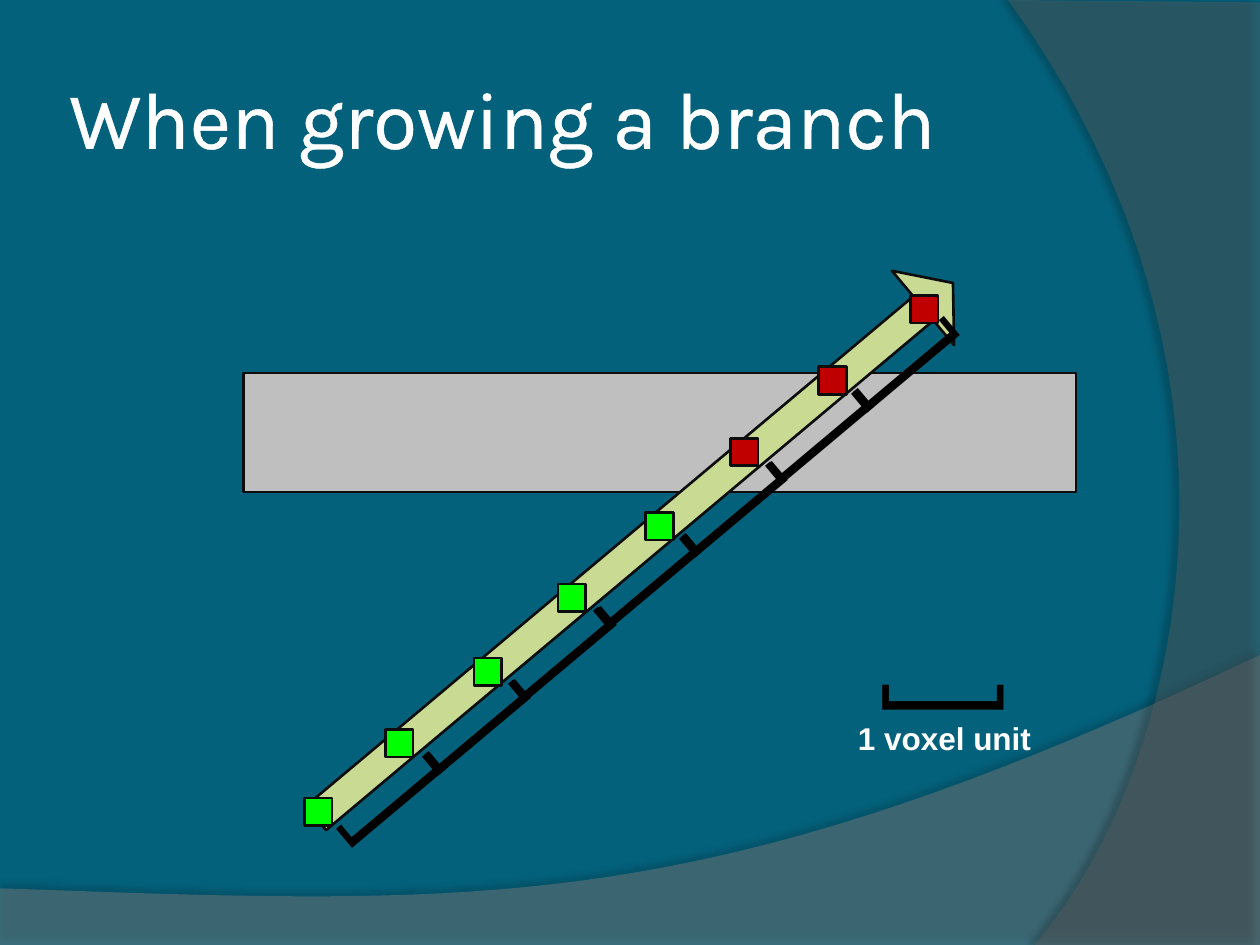
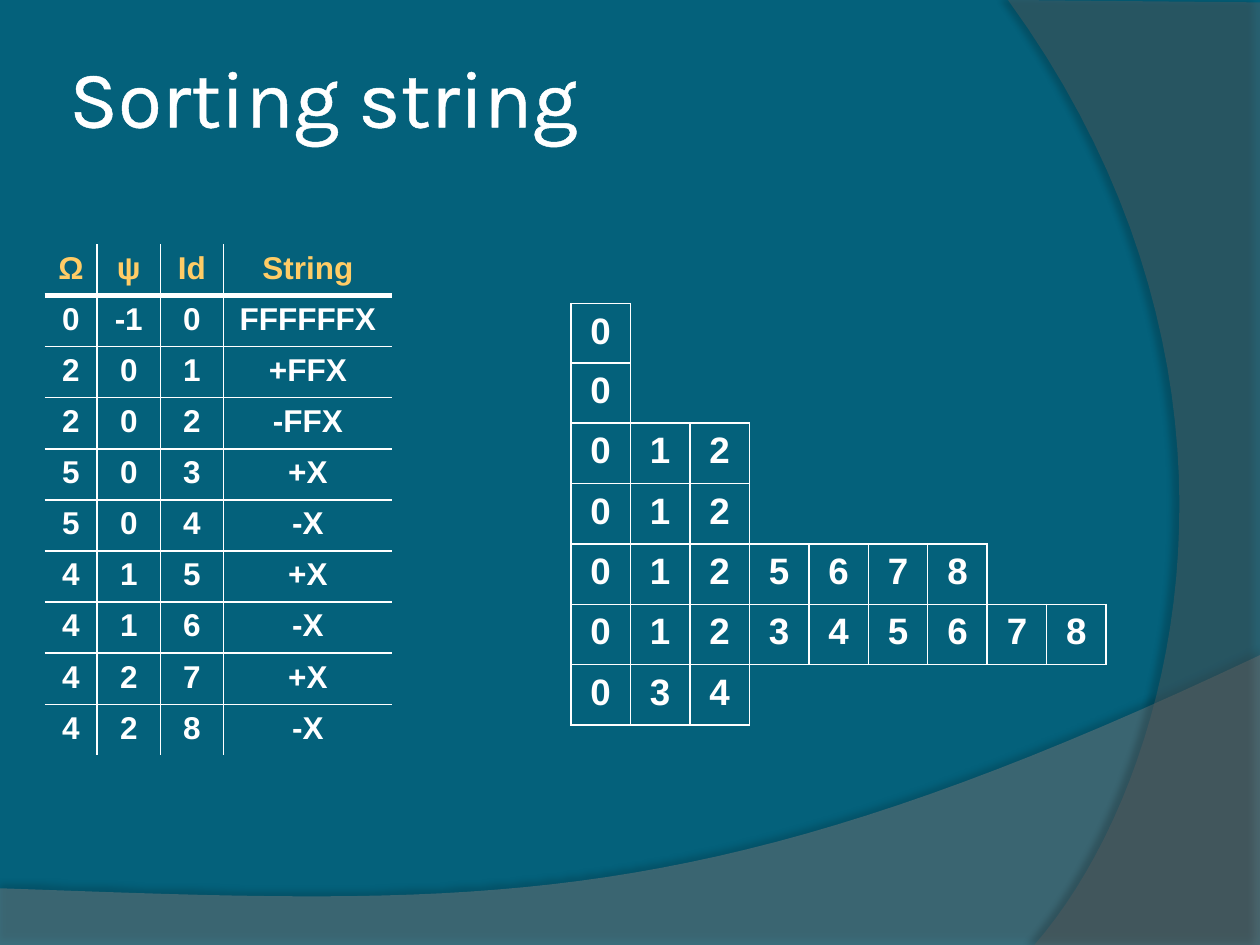
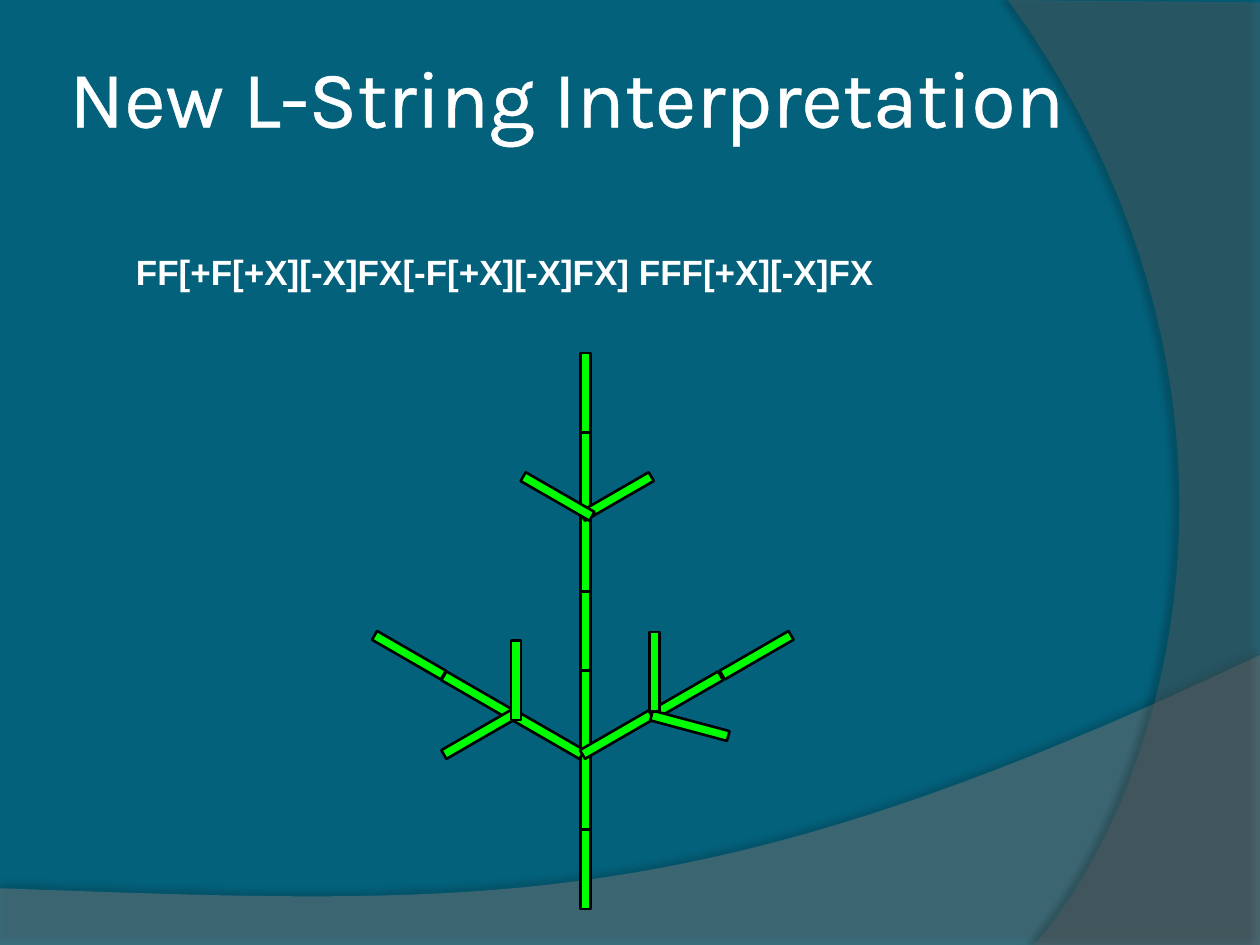
"""Build three slides on growing branches through voxels and sorting strings."""
import dataclasses

import lxml.etree
import pptx
import pptx.dml.color
import pptx.enum.shapes
import pptx.enum.text
import pptx.oxml.ns
import pptx.util

Pt = pptx.util.Pt
qn = pptx.oxml.ns.qn
SHAPES = pptx.enum.shapes.MSO_SHAPE
CENTER = pptx.enum.text.PP_ALIGN.CENTER
MIDDLE = pptx.enum.text.MSO_ANCHOR.MIDDLE
GROW = pptx.enum.text.MSO_AUTO_SIZE.SHAPE_TO_FIT_TEXT


@dataclasses.dataclass(frozen=True)
class Theme:
    """Colours, fonts and type sizes of the deck."""
    background: str = "04617B"
    lower_band: str = "7F7F7F"
    side_band: str = "5E5E5E"
    white: str = "FFFFFF"
    black: str = "000000"
    outline: str = "0D0D0D"
    header: str = "FFCC66"
    branch: str = "C9DA92"
    obstacle: str = "BFBFBF"
    free: str = "00FF00"
    blocked: str = "C00000"
    title_font: str = "Karla"
    body_font: str = "Arial"
    bracket_font: str = "Noto Sans CJK SC"
    title_size: float = 46
    body_size: float = 18
    string_size: float = 20
    index_size: float = 21
    empty_size: float = 12
    bracket_size: float = 72
    line: float = 1.5


THEME = Theme()
NO_GRID_STYLE = "{2D5ABB26-0587-4C30-8999-92F81FD0307C}"
SIDES = {"a:lnL": (0, -1), "a:lnR": (0, 1), "a:lnT": (-1, 0), "a:lnB": (1, 0)}

STRING_ROWS = [
    ["Ω", "ψ", "Id", "String"],
    ["0", "-1", "0", "FFFFFFX"],
    ["2", "0", "1", ""],
    ["2", "0", "2", ""],
    ["5", "0", "3", "+X"],
    ["5", "0", "4", "-X"],
    ["4", "1", "5", "+X"],
    ["4", "1", "6", "-X"],
    ["4", "2", "7", "+X"],
    ["4", "2", "8", "-X"],
]
LONG_TURNS = {2: "+FFX", 3: "-FFX"}
INDEX_ROWS = ["0", "0", "012", "012", "0125678", "012345678", "034"]
VOXELS = [
    (174, 456), (220.3, 416.9), (270.8, 376), (318.9, 333.8),
    (369, 292.8), (417.4, 250.4), (467.8, 209.5), (520.3, 168.9),
]
FREE_VOXELS = 5
TWIGS = [
    (290.2, 416.9, 210), (250.6, 394.6, 210), (211, 371.5, 210),
    (250.6, 416.9, 150), (272.2, 385.9, 270),
    (329.8, 416.9, 330), (369.4, 394.6, 330), (409.7, 371.5, 330),
    (371.5, 411.8, 195), (351.4, 380.9, 270),
    (329.8, 280.8, 330), (295.9, 280.8, 210),
]


def rgb(color):
    """Return the colour object of a hex string."""
    return pptx.dml.color.RGBColor.from_string(color)


def set_values(target, values):
    """Set every attribute named in the dict."""
    for name, value in values.items():
        setattr(target, name, value)


def points(box):
    """Turn plain numbers into lengths in points."""
    return [Pt(value) for value in box]


def add_element(parent, tag, **attributes):
    """Append an XML element with the given attributes."""
    values = {name: str(value) for name, value in attributes.items()}
    return lxml.etree.SubElement(parent, qn(tag), values)


def add_solid_fill(parent, color):
    """Append a solid fill and return its colour element."""
    return add_element(add_element(parent, "a:solidFill"), "a:srgbClr", val=color)


def write(frame, text, color, values, align=None):
    """Write one formatted run into a text frame and return the run."""
    para = frame.paragraphs[0]
    para.alignment = align
    span = para.add_run()
    span.text = text
    set_values(span.font, values)
    span.font.color.rgb = rgb(color)
    return span


def add_text(slide, box, text, color, values, frame_values, rotation=0):
    """Add a wrapped text box with one run and return the run."""
    shape = slide.shapes.add_textbox(*points(box))
    shape.rotation = rotation
    set_values(shape.text_frame, {"word_wrap": True, **frame_values})
    return write(shape.text_frame, text, color, values)


def add_title(slide, text, top):
    """Add the outlined slide title."""
    margins = dict.fromkeys(
        ["margin_left", "margin_top", "margin_right", "margin_bottom"], Pt(3.6))
    span = add_text(
        slide, (36, top, 588, 90), text, THEME.white,
        {"name": THEME.title_font, "size": Pt(THEME.title_size)},
        {"vertical_anchor": MIDDLE, **margins})
    properties = span.font.fill._xPr
    outline = add_element(properties, "a:ln", w=Pt(1.45))
    add_solid_fill(outline, THEME.white)
    properties.insert(0, outline)


def add_label(slide, box, text, size):
    """Add a bold white label."""
    values = {"name": THEME.body_font, "size": Pt(size), "bold": True}
    add_text(slide, box, text, THEME.white, values, {"auto_size": GROW})


def add_bracket(slide, left, top, rotation):
    """Add a turned bracket that spans one voxel unit."""
    values = {"name": THEME.bracket_font, "size": Pt(THEME.bracket_size)}
    add_text(slide, (left, top, 39.6, 94.3), "[", THEME.black, values,
             {"auto_size": GROW}, rotation)


def add_block(slide, box, fill, line=THEME.outline, rotation=0, kind=SHAPES.RECTANGLE):
    """Add a filled and outlined preset shape."""
    shape = slide.shapes.add_shape(kind, *points(box))
    shape.rotation = rotation
    shape.shadow.inherit = False
    shape.fill.solid()
    shape.fill.fore_color.rgb = rgb(fill)
    shape.line.color.rgb = rgb(line)
    shape.line.width = Pt(THEME.line)


def curve(start, first, second, end, steps=40):
    """Return points along a cubic curve, without its start."""
    result = []
    for step in range(1, steps + 1):
        t = step / steps
        weights = ((1 - t) ** 3, 3 * t * (1 - t) ** 2, 3 * t * t * (1 - t), t ** 3)
        result.append(tuple(
            sum(weight * value for weight, value in zip(weights, axis))
            for axis in zip(start, first, second, end)))
    return result


def add_band(slide, corners, controls, end, color, alpha, shadow):
    """Add a translucent band with one curved edge to the slide's layout."""
    outline = corners + curve(corners[-1], *controls, end)
    vertices = [points(vertex) for vertex in outline]
    builder = slide.shapes.build_freeform(*vertices[0])
    builder.add_line_segments(vertices[1:], close=True)
    band = builder.convert_to_shape()
    band.fill.solid()
    band.fill.fore_color.rgb = rgb(color)
    fill_color = next(band.element.spPr.iter(qn("a:srgbClr")))
    add_element(fill_color, "a:alpha", val=alpha * 1000)
    band.line.fill.background()
    band.shadow.inherit = False
    opacity, distance, direction = shadow
    effects = band.element.spPr.find(qn("a:effectLst"))
    cast = add_element(effects, "a:outerShdw", blurRad=Pt(4), dist=Pt(distance),
                       dir=direction * 60000, algn="ctr", rotWithShape=0)
    shade = add_element(cast, "a:srgbClr", val=THEME.black)
    add_element(shade, "a:alpha", val=opacity * 1000)
    slide.slide_layout.shapes.element.append(band.element)


def add_bands(slide):
    """Add the two bands that all slides share."""
    add_band(slide, [(0, 507.6), (0, 540), (720, 540), (720, 374.4)],
             [(402.5, 524.9), (281.5, 517.7)], (0, 507.6),
             THEME.lower_band, 45, (35, 3.5, 270))
    add_band(slide, [(720, 1.4), (720, 540), (591.1, 540)],
             [(673.2, 445.7), (733, 216)], (576, 0),
             THEME.side_band, 40, (45, 4, 180))


def add_borders(cell, widths):
    """Draw the cell's sides that have a width and clear the others."""
    properties = cell._tc.get_or_add_tcPr()
    for tag, width in widths.items():
        side = add_element(properties, tag, w=Pt(width))
        if width:
            add_solid_fill(side, THEME.white)
        else:
            add_element(side, "a:noFill")


def add_grid(slide, corner, rows, widths, heights, size, edge, header=None, margins=None):
    """Add a table of centred bold text whose edge rule gives the border widths."""
    box = (*corner, sum(widths), sum(heights))
    frame = slide.shapes.add_table(len(rows), len(widths), *points(box))
    table = frame.table
    set_values(table, {"first_row": False, "horz_banding": False})
    next(frame.element.iter(qn("a:tableStyleId"))).text = NO_GRID_STYLE
    for column, width in zip(table.columns, widths):
        column.width = Pt(width)
    for row, height in zip(table.rows, heights):
        row.height = Pt(height)
    values = {"name": THEME.body_font, "size": Pt(size), "bold": True}
    for y in range(len(rows)):
        for x in range(len(widths)):
            cell = table.cell(y, x)
            add_borders(cell, {tag: edge((y, x), (y + down, x + right))
                               for tag, (down, right) in SIDES.items()})
            cell.fill.background()
            if x < len(rows[y]) and rows[y][x]:
                set_values(cell, margins or {})
                color = header if header and y == 0 else THEME.white
                write(cell.text_frame, rows[y][x], color, values, CENTER)
            else:
                add_element(cell.text_frame.paragraphs[0]._p, "a:endParaRPr",
                            sz=THEME.empty_size * 100)


def string_edge(cell, neighbour):
    """Return the width of an inner edge, thicker below the header."""
    row, column = neighbour
    if not (0 <= row < len(STRING_ROWS) and 0 <= column < len(STRING_ROWS[0])):
        return 0
    return 3 if {cell[0], row} == {0, 1} else 1


def index_edge(cell, neighbour):
    """Return the width of an edge that touches a filled cell."""
    return int(any(0 <= row < len(INDEX_ROWS) and 0 <= column < len(INDEX_ROWS[row])
                   for row, column in (cell, neighbour)))


def no_edge(cell, neighbour):
    """Return no width for any edge."""
    return 0


def build_branch_slide(slide):
    """Show a branch that meets an obstacle, sampled voxel by voxel."""
    add_block(slide, (508.3, 157.7, 55.4, 22.3), THEME.branch,
              rotation=50.1, kind=SHAPES.ISOSCELES_TRIANGLE)
    add_block(slide, (139, 213.1, 476, 68), THEME.obstacle)
    add_title(slide, "When growing a branch", 21.6)
    add_block(slide, (127.4, 312.5, 454.3, 18), THEME.branch, rotation=320)
    add_label(slide, (483.1, 407.5, 124.6, 28.8), "1 voxel unit", THEME.body_size)
    add_bracket(slide, 513.4, 353.5, 270)
    for step in range(7):
        add_bracket(slide, 200.2 + 49.05 * step, 415.5 - 41.5 * step, 230)
    for index, (left, top) in enumerate(VOXELS):
        fill = THEME.free if index < FREE_VOXELS else THEME.blocked
        add_block(slide, (left, top, 15.8, 15.8), fill)


def build_sorting_slide(slide):
    """Show the string table, its long turns and the sorted index rows."""
    margins = {"margin_left": Pt(8.6), "margin_right": Pt(8.6),
               "margin_top": Pt(4.3), "margin_bottom": Pt(4.3)}
    add_grid(slide, (326.2, 173.5), INDEX_ROWS, [34] * 9, [32] + [34.5] * 6,
             THEME.index_size, index_edge, margins=margins)
    add_title(slide, "Sorting string", 9.4)
    corner, widths, heights = (25.5, 139.7), [30, 36.2, 36, 96.5], [29.2] * 10
    add_grid(slide, corner, STRING_ROWS, widths, heights,
             THEME.body_size, string_edge, header=THEME.header)
    turn_rows = [["", "", "", LONG_TURNS.get(row, "")] for row in range(len(STRING_ROWS))]
    add_grid(slide, corner, turn_rows, widths, heights, THEME.body_size, no_edge)


def build_interpretation_slide(slide):
    """Show an L-string and the plant it draws."""
    add_label(slide, (70.6, 139.7, 510.5, 31.7),
              "FF[+F[+X][-X]FX[-F[+X][-X]FX] FFF[+X][-X]FX", THEME.string_size)
    add_title(slide, "New L-String Interpretation", 9.4)
    trunk = [(311.8, 493.9 - 45.4 * step, 270) for step in range(7)]
    for left, top, rotation in trunk + TWIGS:
        add_block(slide, (left, top, 45.4, 5.8), THEME.free, THEME.black, rotation)


def main():
    """Build and save the deck."""
    deck = pptx.Presentation()
    set_values(deck, {"slide_width": Pt(720), "slide_height": Pt(540)})
    background = deck.slide_master.background.fill
    background.solid()
    background.fore_color.rgb = rgb(THEME.background)
    builders = [build_branch_slide, build_sorting_slide, build_interpretation_slide]
    pages = [deck.slides.add_slide(deck.slide_layouts[6]) for _ in builders]
    add_bands(pages[0])
    for build, page in zip(builders, pages):
        build(page)
    deck.save("out.pptx")


if __name__ == "__main__":
    main()
